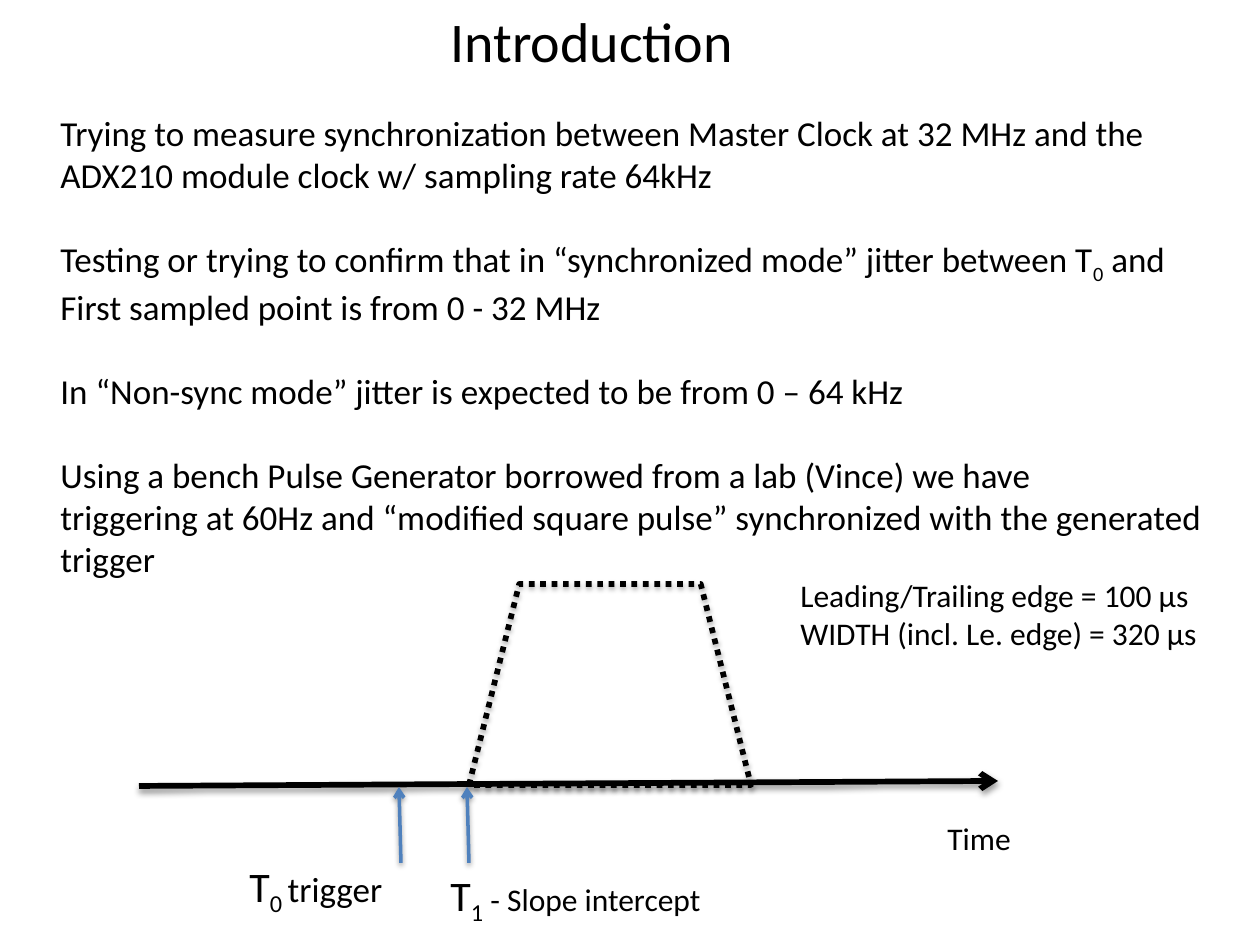
from lxml import etree
from pptx import Presentation
from pptx import util as u
from pptx.dml.color import RGBColor
from pptx.enum import dml, shapes, text
from pptx.oxml import ns

EMU_PER_PX = 914400 / 126
BLACK = "000000"
BLUE = "4F81BD"
FONT = "Calibri"


def px(length):
    return u.Emu(round(length * EMU_PER_PX))


def color(value):
    return RGBColor.from_string(value)


def add_child(parent, tag, **attributes):
    return etree.SubElement(parent, ns.qn(tag), attributes)


def add_shadow(element, opacity, distance):
    effects = add_child(element.spPr, "a:effectLst")
    shadow = add_child(effects, "a:outerShdw", blurRad=str(u.Pt(3.1)), dist=str(u.Pt(distance)),
                       dir="5400000", rotWithShape="0")
    fill = add_child(shadow, "a:srgbClr", val=BLACK)
    add_child(fill, "a:alpha", val=str(opacity * 1000))


def add_label(slide, box, groups, size, wrap=False):
    frame = slide.shapes.add_textbox(*map(px, box)).text_frame
    frame.word_wrap = wrap
    frame.auto_size = text.MSO_AUTO_SIZE.SHAPE_TO_FIT_TEXT
    lines = [(line, number > 0 and index == 0)
             for number, group in enumerate(groups) for index, line in enumerate(group)]
    for position, (line, starts_group) in enumerate(lines):
        paragraph = frame.paragraphs[0] if position == 0 else frame.add_paragraph()
        if starts_group:
            paragraph.space_before = u.Pt(24)
        paragraph.font.name = FONT
        paragraph.font.size = u.Pt(size)
        paragraph.font.color.rgb = color(BLACK)
        for content, run_size, is_subscript in line:
            run = paragraph.add_run()
            run.text = content
            if run_size:
                run.font.size = u.Pt(run_size)
            if is_subscript:
                run.font._element.set("baseline", "-25000")


def plain(content, size=None):
    return content, size, False


def subscript(content):
    return content, None, True


def add_arrow(slide, start, end, line_color, width):
    arrow = slide.shapes.add_connector(shapes.MSO_CONNECTOR.STRAIGHT, *map(px, start + end))
    arrow.line.color.rgb = color(line_color)
    arrow.line.width = u.Pt(width)
    add_child(arrow.line._get_or_add_ln(), "a:tailEnd", type="arrow")
    add_shadow(arrow._element, 38, 1.6)


def add_pulse(slide, box):
    pulse = slide.shapes.add_shape(shapes.MSO_SHAPE.TRAPEZOID, *map(px, box))
    pulse.fill.background()
    pulse.line.color.rgb = color(BLACK)
    pulse.line.width = u.Pt(3.25)
    pulse.line.dash_style = dml.MSO_LINE.ROUND_DOT
    add_shadow(pulse._element, 35, 1.8)


def main():
    deck = Presentation()
    deck.slide_width, deck.slide_height = px(1260), px(945)
    slide = deck.slides.add_slide(deck.slide_layouts[6])

    add_label(slide, (438, 0, 312, 81), [[[plain("Introduction")]]], 32)
    goals = [
        [[plain("Trying to measure synchronization between Master Clock at 32 MHz and the")],
         [plain("ADX210 module clock w/ sampling rate 64kHz")]],
        [[plain("Testing or trying to confirm that in “synchronized mode” jitter between T"),
          subscript("0"), plain(" and")],
         [plain("First sampled point is from 0 - 32 MHz")]],
        [[plain("In “Non-sync mode” jitter is expected to be from 0 – 64 kHz")]],
        [[plain("Using a bench Pulse Generator borrowed from a lab (Vince) we have")],
         [plain("triggering at 60Hz and “modified square pulse” synchronized with the generated")],
         [plain("trigger")]],
    ]
    add_label(slide, (48, 105, 1181, 479), goals, 20)

    add_pulse(slide, (469, 584, 282, 201))
    add_arrow(slide, (139, 786), (998, 781), BLACK, 3.25)
    add_arrow(slide, (401, 863), (399, 787), BLUE, 2)
    add_label(slide, (935, 813, 89, 51), [[[plain("Time")]]], 18)
    add_label(slide, (237, 854, 162, 64),
              [[[plain("T"), subscript("0 "), plain("trigger", 20)]]], 24)
    add_label(slide, (438, 863, 349, 64),
              [[[plain("T"), subscript("1"), plain(" - Slope intercept", 18)]]], 24, wrap=True)
    add_arrow(slide, (469, 863), (467, 787), BLUE, 2)
    edge_times = [[plain("Leading/Trailing edge = 100 μs")],
                  [plain("WIDTH (incl. Le. edge) = 320 μs")]]
    add_label(slide, (788, 570, 427, 89), [edge_times], 18)

    deck.save("out.pptx")


if __name__ == "__main__":
    main()
